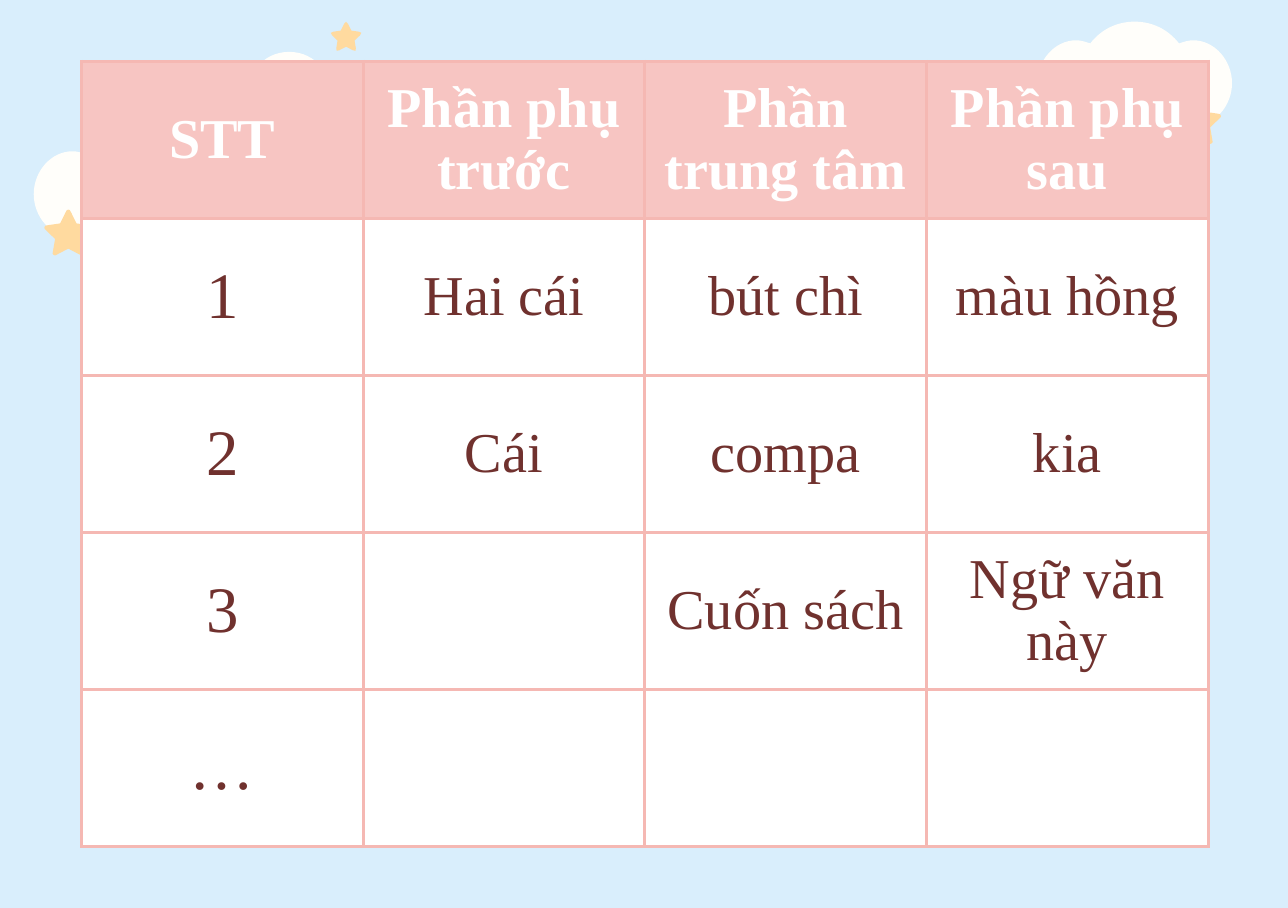
import math
import pptx
import pptx.dml.color
import pptx.enum.text
import pptx.oxml
import pptx.oxml.ns
import pptx.util

Pt = pptx.util.Pt
RGB = pptx.dml.color.RGBColor.from_string
THEME = {
    "sky": "D9EEFC", "cloud": "FFFEFA", "star": "FFDA9F",
    "header": "F7C5C2", "border": "F5B8B3", "cell": "FFFFFF",
    "header_text": "FFFFFF", "text": "70312E",
    "font": "Times New Roman", "size": 26, "number_size": 30, "border_width": 1.5,
}

prs = pptx.Presentation()
prs.slide_width, prs.slide_height = Pt(595.4), Pt(419.8)
s = prs.slides.add_slide(prs.slide_layouts[6])
s.background.fill.solid()
s.background.fill.fore_color.rgb = RGB(THEME["sky"])


def add_outline(start, segments, color):
    """Draw segments of one point (line) or three points (Bezier curve)."""
    fb = s.shapes.build_freeform(Pt(start[0]), Pt(start[1]))
    fb.add_line_segments([(Pt(x), Pt(y)) for segment in segments for x, y in segment])
    sp = fb.convert_to_shape()
    lines = iter(sp._element.findall(".//" + pptx.oxml.ns.qn("a:lnTo")))
    for segment in segments:
        first = next(lines)
        if len(segment) == 3:
            curve = pptx.oxml.parse_xml(f'<a:cubicBezTo {pptx.oxml.ns.nsdecls("a")}/>')
            first.addprevious(curve)
            for line in (first, next(lines), next(lines)):
                curve.append(line[0])
                line.getparent().remove(line)
    sp.shadow.inherit = False
    sp.fill.solid()
    sp.fill.fore_color.rgb = RGB(color)
    sp.line.fill.background()


# Clouds: one quarter of the outline, mirrored twice (left, top, width)
quarter = [(0, -0.316), (0.092, -0.316), (0.172, -0.276), (0.228, -0.204), (0.252, -0.212),
           (0.276, -0.22), (0.3, -0.22), (0.412, -0.22), (0.5, -0.116), (0.5, 0)]
half = quarter + [(x, -y) for x, y in quarter[-2::-1]]
whole = half + [(-x, y) for x, y in half[-2::-1]]
for left, top, width in [(479.5, 10, 90), (418.3, 67, 67), (15.6, 61.3, 90), (100.2, 24, 67)]:
    points = [(left + (x + 0.5) * width, top + (y + 0.316) * width) for x, y in whole]
    add_outline(points[0], [points[i:i + 3] for i in range(1, len(points), 3)], THEME["cloud"])


def between(a, b, share):
    return a[0] + share * (b[0] - a[0]), a[1] + share * (b[1] - a[1])


# Stars: five points with rounded tips (left, top, width)
for left, top, width in [(542.2, 45.4, 22.2), (525.6, 70.6, 14.2), (418.3, 53.3, 14.2),
                         (20.5, 97, 22.2), (46.1, 121.7, 14.2), (152.9, 10.1, 14.2)]:
    corners = []
    for i in range(10):
        a = math.radians(36 * i - 90)
        radius = width * (0.29 if i % 2 else 0.58)
        corners.append((left + width / 2 + radius * math.cos(a),
                        top + width * 0.52 + radius * math.sin(a)))
    segments = []
    for i in range(0, 10, 2):
        before, tip, after = corners[i - 1], corners[i], corners[i + 1]
        near, far = between(tip, before, 0.17), between(tip, after, 0.17)
        segments += [[between(tip, before, 0.35)],
                     [near, near, between(near, far, 0.5)],
                     [far, far, between(tip, after, 0.35)],
                     [after]]
    add_outline(corners[-1], segments, THEME["star"])

# Table of noun phrase parts
rows = [
    ["STT", "Phần phụ trước", "Phần trung tâm", "Phần phụ sau"],
    ["1", "Hai cái", "bút chì", "màu hồng"],
    ["2", "Cái", "compa", "kia"],
    ["3", "", "Cuốn sách", "Ngữ văn này"],
    ["…", "", "", ""],
]
table = s.shapes.add_table(5, 4, Pt(37.7), Pt(28.3), Pt(520.8), Pt(363)).table
table.horz_banding = False
for column in table.columns:
    column.width = Pt(130.2)
for row in table.rows:
    row.height = Pt(72.6)

for i, texts in enumerate(rows):
    for j, text in enumerate(texts):
        cell = table.cell(i, j)
        cell.vertical_anchor = pptx.enum.text.MSO_ANCHOR.MIDDLE

        # Borders come before the fill in the cell properties
        tcPr = cell._tc.get_or_add_tcPr()
        for side in ("lnL", "lnR", "lnT", "lnB"):
            tcPr.append(pptx.oxml.parse_xml(
                f'<a:{side} {pptx.oxml.ns.nsdecls("a")} w="{Pt(THEME["border_width"])}">'
                f'<a:solidFill><a:srgbClr val="{THEME["border"]}"/></a:solidFill></a:{side}>'))
        cell.fill.solid()
        cell.fill.fore_color.rgb = RGB(THEME["header" if i == 0 else "cell"])

        # Text
        p = cell.text_frame.paragraphs[0]
        p.text = text
        p.alignment = pptx.enum.text.PP_ALIGN.CENTER
        for r in p.runs:
            r.font.name = THEME["font"]
            r.font.size = Pt(THEME["number_size" if i and j == 0 else "size"])
            r.font.bold = i == 0
            r.font.color.rgb = RGB(THEME["header_text" if i == 0 else "text"])

prs.save("out.pptx")
